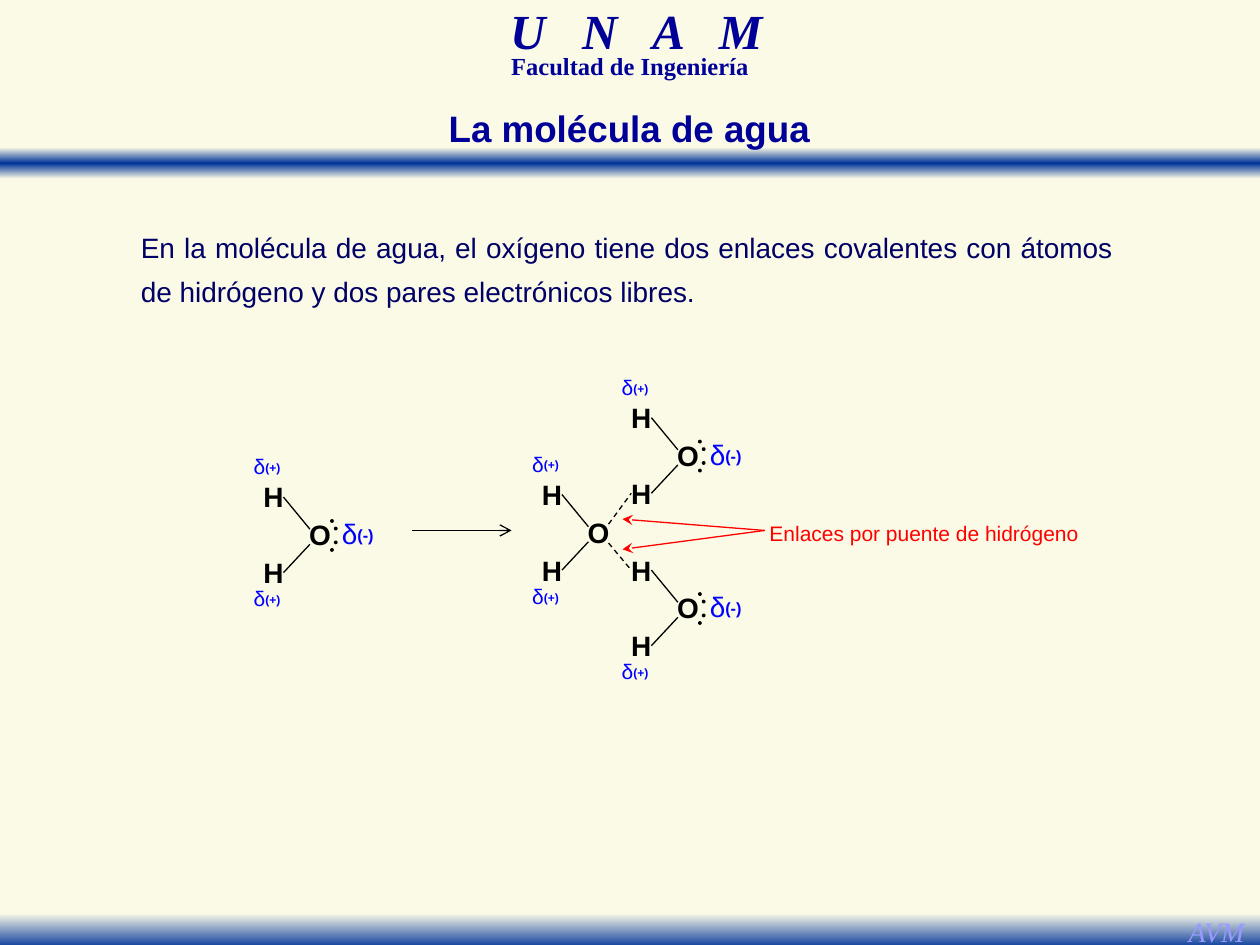
from lxml import etree
from pptx import Presentation
from pptx.dml.color import RGBColor
from pptx.enum.dml import MSO_LINE_DASH_STYLE as Dash
from pptx.enum.shapes import MSO_CONNECTOR as Connector, MSO_SHAPE as Shape
from pptx.enum.text import MSO_ANCHOR as Anchor, MSO_AUTO_SIZE as AutoSize, PP_ALIGN as Align
from pptx.oxml.ns import qn
from pptx.util import Inches, Pt

CREAM, BAND, NAVY, INK = "FAFAE6", "003399", "000099", "000066"
BLACK, BLUE, RED, LILAC = "000000", "0000FF", "FF0000", "9999FF"
SERIF = "Times New Roman"


def color(value):
    return RGBColor.from_string(value)


class Slide:
    def __init__(self, deck):
        self.page = deck.slides.add_slide(deck.slide_layouts[5])
        self.shapes = self.page.shapes
        background = self.page.background.fill
        background.solid()
        background.fore_color.rgb = color(CREAM)

    def start_group(self):
        self.shapes = self.page.shapes.add_group_shape().shapes

    def end_group(self):
        self.shapes = self.page.shapes

    def style(self, para, size, ink, font="Arial", bold=False, italic=False, align=Align.CENTER):
        para.alignment = align
        para.font.name, para.font.size = font, Pt(size)
        para.font.bold, para.font.italic = bold, italic
        para.font.color.rgb = color(ink)

    def title(self, text, area):
        title = self.page.shapes.title
        title.left, title.top, title.width, title.height = map(Inches, area)
        frame = title.text_frame
        frame.text = text
        frame.auto_size = AutoSize.NONE
        frame.vertical_anchor = Anchor.TOP
        self.style(frame.paragraphs[0], 21, NAVY, bold=True)
        title._element.getparent().append(title._element)

    def text(self, text, area, size, ink, wrap=True, inset=True, **look):
        box = self.shapes.add_textbox(*map(Inches, area))
        frame = box.text_frame
        frame.word_wrap = wrap
        frame.auto_size = AutoSize.SHAPE_TO_FIT_TEXT
        if not inset:
            frame.margin_left = frame.margin_top = 0
            frame.margin_right = frame.margin_bottom = 0
        para = frame.paragraphs[0]
        para.add_run().text = text
        self.style(para, size, ink, **look)
        return box

    def label(self, text, area, size, ink, **look):
        return self.text(text, area, size, ink, wrap=False, inset=False, **look)

    def charge(self, sign, area, size):
        span = self.label("δ", area, size, BLUE).text_frame.paragraphs[0].add_run()
        span.text = f"({sign})"
        span.font.bold = True
        span._r.get_or_add_rPr().set("baseline", "10000")

    def band(self, area, stops):
        band = self.shapes.add_shape(Shape.RECTANGLE, *map(Inches, area))
        band.shadow.inherit = False
        band.line.fill.background()
        band.fill.gradient()
        band.fill.gradient_angle = 270
        stop_list = band._element.spPr.find(".//" + qn("a:gsLst"))
        stop_list.clear()
        for position, shade in stops:
            stop = etree.SubElement(stop_list, qn("a:gs"), pos=str(position * 1000))
            etree.SubElement(stop, qn("a:srgbClr"), val=shade)

    def dot(self, x, y):
        dot = self.shapes.add_shape(Shape.OVAL, *map(Inches, (x, y, 0.03, 0.03)))
        dot.shadow.inherit = False
        dot.fill.solid()
        dot.fill.fore_color.rgb = color(BLACK)
        dot.line.fill.background()

    def line(self, start, end, ink=BLACK, head=None, dash=None):
        line = self.shapes.add_connector(Connector.STRAIGHT, *map(Inches, (*start, *end)))
        line.line.color.rgb = color(ink)
        line.line.width = Pt(0.75)
        if dash:
            line.line.dash_style = dash
        if head:
            etree.SubElement(line.line._get_or_add_ln(), qn("a:tailEnd"), type=head)
        etree.SubElement(line._element.spPr, qn("a:effectLst"))
        return line

    def molecule(self, x, y, upper=True, lower=True, pairs=True):
        atoms = [self.label("H", (x, y + drop, 0.16, 0.27), 16, BLACK, bold=True)
                 for drop in (0, 0.6)]
        self.label("O", (x + 0.36, y + 0.3, 0.18, 0.27), 16, BLACK, bold=True)
        for atom, begin, end in zip(atoms, (0.13, 0.73), (0.39, 0.51)):
            bond = self.line((x + 0.16, y + begin), (x + 0.37, y + end))
            bond.begin_connect(atom, 3)
        for shown, offset in ((upper, -0.21), (lower, 0.84)):
            if shown:
                self.charge("+", (x - 0.08, y + offset, 0.22, 0.2), 12)
        if pairs:
            for dx, dy in ((0.53, 0.31), (0.56, 0.37), (0.56, 0.48), (0.53, 0.54)):
                self.dot(x + dx, y + dy)
            self.charge("-", (x + 0.62, y + 0.29, 0.26, 0.27), 16)
        return atoms


def main():
    deck = Presentation()
    deck.slide_width, deck.slide_height = Inches(10), Inches(7.5)
    slide = Slide(deck)

    slide.band((0, 1.17, 10, 0.25), ((0, CREAM), (50, BAND), (100, CREAM)))
    slide.band((0, 7.25, 10, 0.28), ((0, CREAM), (100, BAND)))
    school = slide.text("U N A M", (3.09, 0.08, 3.92, 0.43), 28, NAVY,
                        font=SERIF, bold=True, italic=True)
    faculty = slide.text("Facultad de Ingeniería", (3.21, 0.42, 3.58, 0.26), 14, NAVY,
                         font=SERIF, bold=True)
    for box in (school, faculty):
        box.text_frame.paragraphs[0].line_spacing = 0.7
    school.text_frame.paragraphs[0].runs[0]._r.get_or_add_rPr().set("spc", "700")
    slide.text("AVM", (9.31, 7.21, 0.69, 0.37), 16, LILAC, wrap=False, font=SERIF, italic=True)

    body = slide.text(
        "En la molécula de agua, el oxígeno tiene dos enlaces covalentes con átomos "
        "de hidrógeno y dos pares electrónicos libres.",
        (0.81, 1.7, 8.12, 0.76), 16, INK, align=Align.JUSTIFY)
    para = body.text_frame.paragraphs[0]
    para.line_spacing = 1.3
    para._p.get_or_add_pPr().set("marL", str(Inches(0.21)))

    slide.start_group()
    slide.molecule(2.09, 3.81)
    slide.end_group()
    slide.line((3.27, 4.21), (4.06, 4.21), head="arrow")

    slide.start_group()
    slide.molecule(4.3, 3.79, pairs=False)
    upper_atoms = slide.molecule(5.01, 3.18, lower=False)
    lower_atoms = slide.molecule(5.01, 4.39, upper=False)
    for atom, start, end in ((upper_atoms[1], 4.16, 3.92), (lower_atoms[0], 4.31, 4.52)):
        bridge = slide.line((4.83, start), (5.01, end), dash=Dash.DASH)
        bridge.end_connect(atom, 1)
    slide.end_group()

    for y in (4.12, 4.36):
        slide.line((6.07, 4.21), (4.94, y), RED, head="stealth")
    slide.label("Enlaces por puente de hidrógeno", (6.1, 4.13, 2.47, 0.2), 12, RED)
    slide.title("La molécula de agua", (2.83, 0.79, 4.33, 0.45))
    deck.save("out.pptx")


if __name__ == "__main__":
    main()
